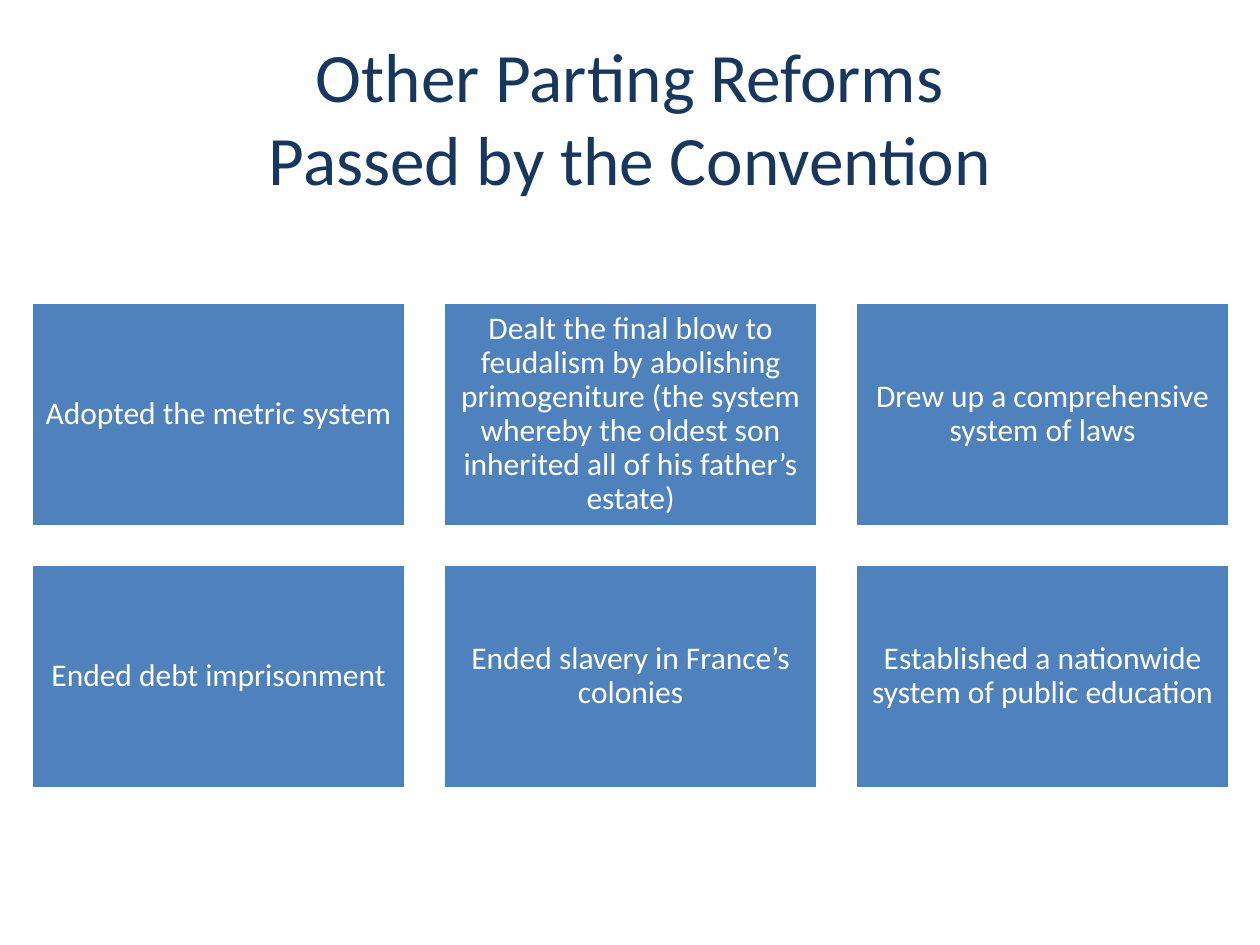
from pptx import Presentation
from pptx.dml.color import RGBColor as RGB
from pptx.enum.shapes import MSO_SHAPE as Shape
from pptx.enum.text import MSO_ANCHOR as Anchor, PP_ALIGN as Align
from pptx.util import Inches, Pt

COLORS = {"title": "17375E", "box": "4F81BD", "white": "FFFFFF"}
FONT = "Calibri"
TITLE = "Other Parting Reforms\nPassed by the Convention"
REFORMS = [
    "Adopted the metric system",
    "Dealt the final blow to feudalism by abolishing primogeniture "
    "(the system whereby the oldest son inherited all of his father’s estate)",
    "Drew up a comprehensive system of laws",
    "Ended debt imprisonment",
    "Ended slavery in France’s colonies",
    "Established a nationwide system of public education",
]
COLS = 3
LEFT, TOP = 0.25, 2.4
WIDTH, HEIGHT, GAP = 2.97, 1.78, 0.3


def color(name):
    return RGB.from_string(COLORS[name])


def set_text(shape, text, size, name):
    """Write one centred paragraph, with its lines kept together."""
    frame = shape.text_frame
    frame.word_wrap = True
    frame.vertical_anchor = Anchor.MIDDLE
    para = frame.paragraphs[0]
    para.text = text
    para.alignment = Align.CENTER
    for run in para.runs:
        run.font.name = FONT
        run.font.size = Pt(size)
        run.font.color.rgb = color(name)
    return frame


def add_title(slide):
    box = slide.shapes.add_textbox(Inches(0.5), Inches(0.3), Inches(9), Inches(1.25))
    set_text(box, TITLE, 39.6, "title")


def add_box(slide, left, top, text):
    box = slide.shapes.add_shape(
        Shape.RECTANGLE, Inches(left), Inches(top), Inches(WIDTH), Inches(HEIGHT))
    box.shadow.inherit = False
    box.fill.solid()
    box.fill.fore_color.rgb = color("box")
    box.line.color.rgb = color("white")
    box.line.width = Pt(2)
    frame = set_text(box, text, 18, "white")
    frame.paragraphs[0].line_spacing = 0.9
    frame.margin_left = frame.margin_right = Inches(0.07)
    frame.margin_top = frame.margin_bottom = Inches(0.07)


def add_grid(slide):
    for i, text in enumerate(REFORMS):
        row, col = divmod(i, COLS)
        add_box(slide, LEFT + col * (WIDTH + GAP), TOP + row * (HEIGHT + GAP), text)


def main():
    deck = Presentation()
    deck.slide_width, deck.slide_height = Inches(10), Inches(7.5)
    slide = deck.slides.add_slide(deck.slide_layouts[6])
    add_title(slide)
    add_grid(slide)
    deck.save("out.pptx")


if __name__ == "__main__":
    main()
